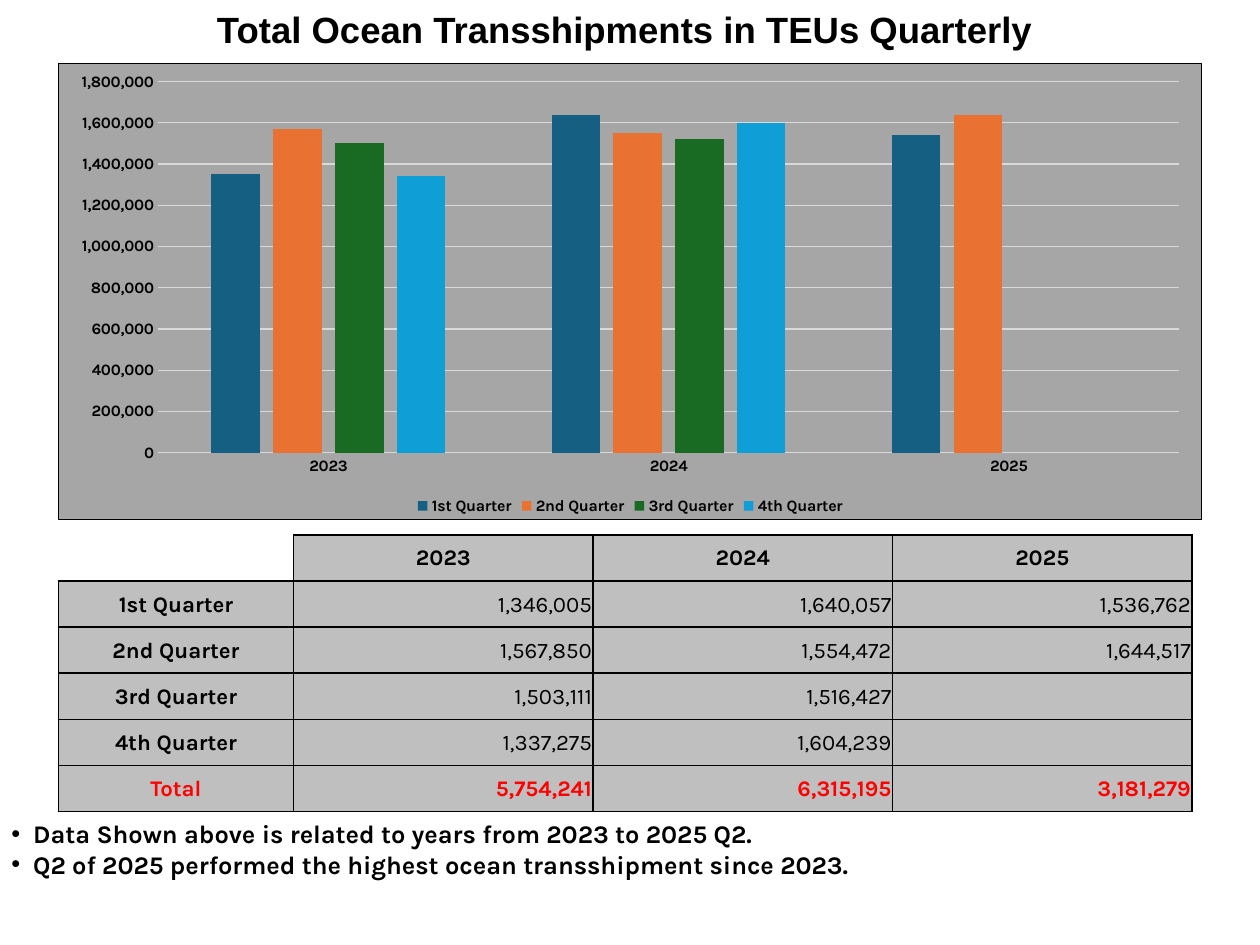
from lxml.etree import SubElement
from pptx import Presentation
from pptx.chart.data import CategoryChartData
from pptx.dml.color import RGBColor
from pptx.enum.chart import XL_CHART_TYPE, XL_LEGEND_POSITION, XL_TICK_MARK
from pptx.enum.text import MSO_ANCHOR, MSO_AUTO_SIZE, PP_ALIGN
from pptx.oxml import parse_xml
from pptx.oxml.ns import nsdecls, qn
from pptx.util import Cm, Inches, Pt

TITLE = "Total Ocean Transshipments in TEUs Quarterly"
YEARS = ["2023", "2024", "2025"]
QUARTERS = [
    ("1st Quarter", "156082", [1346005, 1640057, 1536762]),
    ("2nd Quarter", "E97132", [1567850, 1554472, 1644517]),
    ("3rd Quarter", "196B24", [1503111, 1516427, None]),
    ("4th Quarter", "0F9ED5", [1337275, 1604239, None]),
]
NOTES = [
    "Data Shown above is related to years from 2023 to 2025 Q2.",
    "Q2 of 2025 performed the highest ocean transshipment since 2023.",
]
FONT = "Karla"
BLACK, RED, GRID = "000000", "FF0000", "D9D9D9"
CHART_FILL, CELL_FILL = "A6A6A6", "BFBFBF"
LEFT, WIDTH = 0.51, 9.92
LABEL_W, YEAR_W = 2.06, 2.62
PLOT = {"x": 0.087, "y": 0.04, "w": 0.893, "h": 0.814}


def rgb(color):
    return RGBColor.from_string(color)


def set_font(font, size, color=BLACK, bold=True, name=FONT):
    font.name, font.size, font.bold = name, Pt(size), bold
    font.color.rgb = rgb(color)


def place(sp, left, top, width, height):
    sp.left, sp.top = Inches(left), Inches(top)
    sp.width, sp.height = Inches(width), Inches(height)


def add_title(s):
    sp = s.shapes.title
    place(sp, LEFT, 0, WIDTH, 0.55)
    tf = sp.text_frame
    tf.text = TITLE
    tf.auto_size = MSO_AUTO_SIZE.NONE
    tf.vertical_anchor = MSO_ANCHOR.MIDDLE
    p = tf.paragraphs[0]
    p.alignment, p.line_spacing = PP_ALIGN.CENTER, 0.9
    set_font(p.font, 23, name="Arial")


def add_notes_list(s):
    sp = s.placeholders[1]
    place(sp, 0, 7.11, 11.02, 1.16)
    tf = sp.text_frame
    tf.text = "\n".join(NOTES)
    tf.auto_size = MSO_AUTO_SIZE.NONE
    for p in tf.paragraphs:
        p.space_before = Pt(0)
        set_font(p.font, 16)
        pPr = p._p.get_or_add_pPr()
        pPr.set("marL", str(Inches(0.19)))
        pPr.set("indent", str(-Inches(0.19)))


def set_borders(cell, sides):
    tcPr = cell._tc.get_or_add_tcPr()
    for side in sides:
        ln = SubElement(tcPr, qn("a:ln" + side), w=str(Pt(1)))
        fill = SubElement(ln, qn("a:solidFill"))
        SubElement(fill, qn("a:srgbClr"), val=BLACK)


def add_totals_table(s):
    totals = [sum(v or 0 for v in col) for col in zip(*(q[2] for q in QUARTERS))]
    rows = [["", *YEARS]]
    for name, values in [(q[0], q[2]) for q in QUARTERS] + [("Total", totals)]:
        rows.append([name] + [f"{v:,}" if v else "" for v in values])
    tbl = s.shapes.add_table(len(rows), len(rows[0]), Inches(LEFT), Inches(4.68),
                             Inches(WIDTH), Inches(2.42)).table
    tbl.first_row = tbl.horz_banding = False
    for i, col in enumerate(tbl.columns):
        col.width = Inches(YEAR_W if i else LABEL_W)
    for r, row in enumerate(rows):
        is_total = r == len(rows) - 1
        for c, text in enumerate(row):
            cell = tbl.cell(r, c)
            is_header = r == 0 or c == 0
            cell.text = text
            cell.vertical_anchor = MSO_ANCHOR.MIDDLE
            cell.margin_left = cell.margin_right = cell.margin_top = Inches(0.01)
            cell.margin_bottom = 0
            p = cell.text_frame.paragraphs[0]
            p.alignment = PP_ALIGN.CENTER if is_header else PP_ALIGN.RIGHT
            set_font(p.font, 14, RED if is_total else BLACK, is_header or is_total)
            if r == c == 0:
                set_borders(cell, "RB")
                cell.fill.background()
            else:
                set_borders(cell, "LRTB")
                cell.fill.solid()
                cell.fill.fore_color.rgb = rgb(CELL_FILL)


def frame_chart(chart):
    chart._chartSpace.find(qn("c:chart")).addnext(parse_xml(
        f'<c:spPr {nsdecls("c", "a")}>'
        f'<a:solidFill><a:srgbClr val="{CHART_FILL}"/></a:solidFill>'
        f'<a:ln w="{Pt(0.75)}"><a:solidFill><a:srgbClr val="{BLACK}"/></a:solidFill></a:ln>'
        '</c:spPr>'))
    area = chart._chartSpace.find(".//" + qn("c:plotArea"))
    for old in area.findall(qn("c:layout")):
        area.remove(old)
    modes = "".join(f'<c:{k}Mode val="edge"/>' for k in "xy")
    sizes = "".join(f'<c:{k} val="{v}"/>' for k, v in PLOT.items())
    area.insert(0, parse_xml(
        f'<c:layout {nsdecls("c")}><c:manualLayout><c:layoutTarget val="inner"/>'
        f'{modes}{sizes}</c:manualLayout></c:layout>'))


def add_quarter_chart(s):
    data = CategoryChartData(number_format="#,##0")
    data.categories = YEARS
    for name, _, values in QUARTERS:
        data.add_series(name, [round(v, -4) if v else None for v in values])
    chart = s.shapes.add_chart(XL_CHART_TYPE.COLUMN_CLUSTERED, Inches(LEFT), Inches(0.55),
                               Inches(10.01), Inches(4), data).chart
    chart.has_title = False
    set_font(chart.font, 10)
    plot = chart.plots[0]
    plot.gap_width, plot.overlap, plot.vary_by_categories = 219, -27, False
    for ser, (_, color, _) in zip(plot.series, QUARTERS):
        ser.format.fill.solid()
        ser.format.fill.fore_color.rgb = rgb(color)
    cat, val = chart.category_axis, chart.value_axis
    for axis in (cat, val):
        axis.major_tick_mark = axis.minor_tick_mark = XL_TICK_MARK.NONE
        set_font(axis.tick_labels.font, 10)
    val.minimum_scale, val.maximum_scale, val.major_unit = 0, 1800000, 200000
    val.tick_labels.number_format = "#,##0"
    val.tick_labels.number_format_is_linked = False
    val.format.line.fill.background()
    for line in (cat.format.line, val.major_gridlines.format.line):
        line.color.rgb, line.width = rgb(GRID), Pt(0.75)
    chart.has_legend = True
    chart.legend.position = XL_LEGEND_POSITION.BOTTOM
    chart.legend.include_in_layout = False
    set_font(chart.legend.font, 10)
    frame_chart(chart)


def main():
    prs = Presentation()
    prs.slide_width, prs.slide_height = Cm(28), Cm(21)
    s = prs.slides.add_slide(prs.slide_layouts[1])
    add_title(s)
    add_notes_list(s)
    add_totals_table(s)
    add_quarter_chart(s)
    prs.save("out.pptx")


if __name__ == "__main__":
    main()
